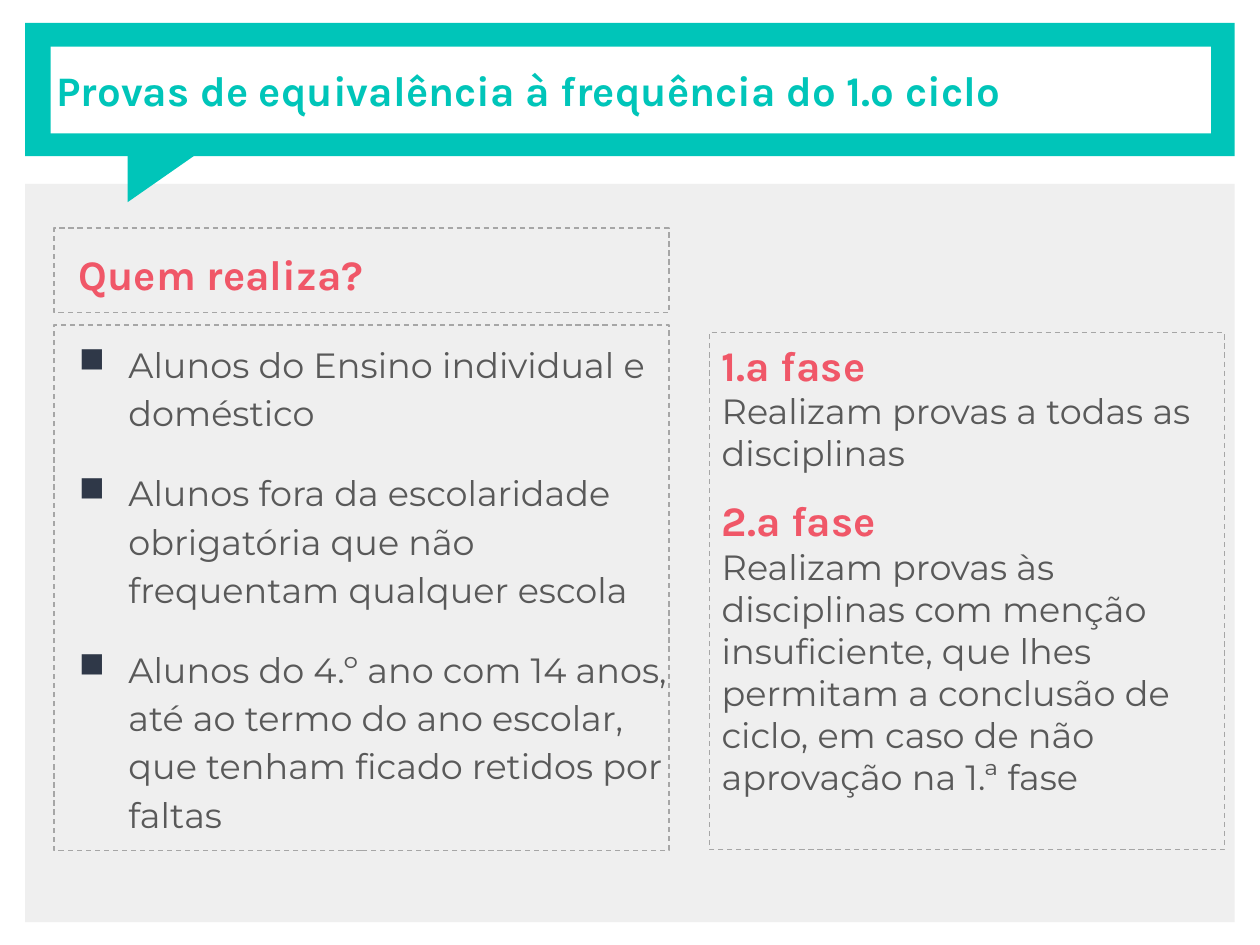
"""Build the slide on 1st-cycle equivalence exams."""
import pptx
import pptx.util
import pptx.dml.color
import pptx.enum.dml
import pptx.enum.shapes
import pptx.enum.text
import pptx.oxml
import pptx.oxml.ns

Cm, Pt = pptx.util.Cm, pptx.util.Pt
RGBColor = pptx.dml.color.RGBColor
SHAPE = pptx.enum.shapes.MSO_SHAPE
ANCHOR = pptx.enum.text.MSO_ANCHOR

TEAL = RGBColor(0x00, 0xC5, 0xB9)
CORAL = RGBColor(0xF0, 0x57, 0x68)
GREY = RGBColor(0x59, 0x59, 0x59)
DASH_GREY = RGBColor(0xA6, 0xA6, 0xA6)
PANEL = RGBColor(0xEF, 0xEF, 0xEF)
WHITE = RGBColor(0xFF, 0xFF, 0xFF)
NAVY = RGBColor(0x2F, 0x38, 0x48)

TITLE = "Provas de equivalência à frequência do 1.º ciclo"
QUESTION = "Quem realiza?"
STUDENTS = [
    "Alunos do Ensino individual e doméstico",
    "Alunos fora da escolaridade obrigatória que não frequentam qualquer escola",
    "Alunos do 4.º ano com 14 anos, até ao termo do ano escolar, que tenham ficado retidos por faltas",
]
PHASES = [
    ("1.ª fase", "Realizam provas a todas as disciplinas"),
    ("2.ª fase", "Realizam provas às disciplinas com menção insuficiente, que lhes permitam "
                 "a conclusão de ciclo, em caso de não aprovação na 1.ª fase"),
]

HEADING = ("Karla", 24, True)
BODY = ("Montserrat", 20, False)
BACKDROP = [
    (SHAPE.RECTANGLE, (0.51, 3.71, 24.38, 14.88), 0, PANEL),
    (SHAPE.RECTANGLE, (0.51, 0.46, 24.38, 2.69), 0, TEAL),
    (SHAPE.RIGHT_TRIANGLE, (2.84, 2.59, 1.22, 1.75), 90, TEAL),
    (SHAPE.RECTANGLE, (1.02, 0.94, 23.39, 1.75), 0, WHITE),
]
TITLE_BOX = (0.89, 0.46, 23.5, 2.69)
QUESTION_BOX = (1.09, 4.6, 12.4, 1.7)
STUDENTS_BOX = (1.09, 6.55, 12.4, 10.59)
PHASES_BOX = (14.3, 6.71, 10.39, 10.41)


def add_shape(s, kind, box, fill=None):
    sp = s.shapes.add_shape(kind, *map(Cm, box))
    sp.shadow.inherit = False
    sp.line.fill.background()
    if fill is None:
        sp.fill.background()
    else:
        sp.fill.solid()
        sp.fill.fore_color.rgb = fill
    return sp


def set_frame(sp, right, vertical, anchor=ANCHOR.TOP):
    tf = sp.text_frame
    tf.word_wrap = True
    tf.vertical_anchor = anchor
    tf.margin_left, tf.margin_right = Cm(0.25), Cm(right)
    tf.margin_top = tf.margin_bottom = Cm(vertical)
    return tf


def add_dashed_box(s, box, vertical):
    sp = add_shape(s, SHAPE.RECTANGLE, box)
    sp.line.color.rgb = DASH_GREY
    sp.line.width = Pt(0.75)
    sp.line.dash_style = pptx.enum.dml.MSO_LINE.DASH
    return set_frame(sp, 0, vertical)


def add_text(tf, text, style, color, before=0, after=0, spacing=1.0):
    p = tf.paragraphs[0]
    if p.runs:
        p = tf.add_paragraph()
    p.alignment = pptx.enum.text.PP_ALIGN.LEFT
    p.space_before, p.space_after = Pt(before), Pt(after)
    p.line_spacing = spacing
    r = p.add_run()
    r.text = text
    r.font.name, size, r.font.bold = style
    r.font.size = Pt(size)
    r.font.color.rgb = color
    return p


def set_indent(p, left, first=0, bullet=None):
    pPr = p._p.get_or_add_pPr()
    pPr.set("marL", str(Cm(left)))
    pPr.set("indent", str(Cm(first)))
    if bullet:
        ns = pptx.oxml.ns.nsdecls("a")
        for xml in (f'<a:buClr {ns}><a:srgbClr val="{NAVY}"/></a:buClr>',
                    f'<a:buChar {ns} char="{bullet}"/>'):
            pPr.append(pptx.oxml.parse_xml(xml))


def main():
    prs = pptx.Presentation()
    prs.slide_width, prs.slide_height = Cm(25.4), Cm(19.05)
    s = prs.slides.add_slide(prs.slide_layouts[6])

    for kind, box, rotation, fill in BACKDROP:
        add_shape(s, kind, box, fill).rotation = rotation

    title = s.shapes.add_textbox(*map(Cm, TITLE_BOX))
    add_text(set_frame(title, 0.25, 0.25, ANCHOR.MIDDLE), TITLE, HEADING, TEAL)

    tf = add_dashed_box(s, QUESTION_BOX, 0.25)
    set_indent(add_text(tf, QUESTION, HEADING, CORAL, spacing=1.15), 0.25)

    tf = add_dashed_box(s, STUDENTS_BOX, 0.25)
    for student in STUDENTS:
        p = add_text(tf, student, BODY, GREY, before=6, after=12, spacing=1.15)
        set_indent(p, 1.25, -1, "■")

    tf = add_dashed_box(s, PHASES_BOX, 0.13)
    for name, rule in PHASES:
        add_text(tf, name, HEADING, CORAL)
        add_text(tf, rule, BODY, GREY, after=12)

    prs.save("out.pptx")


if __name__ == "__main__":
    main()
